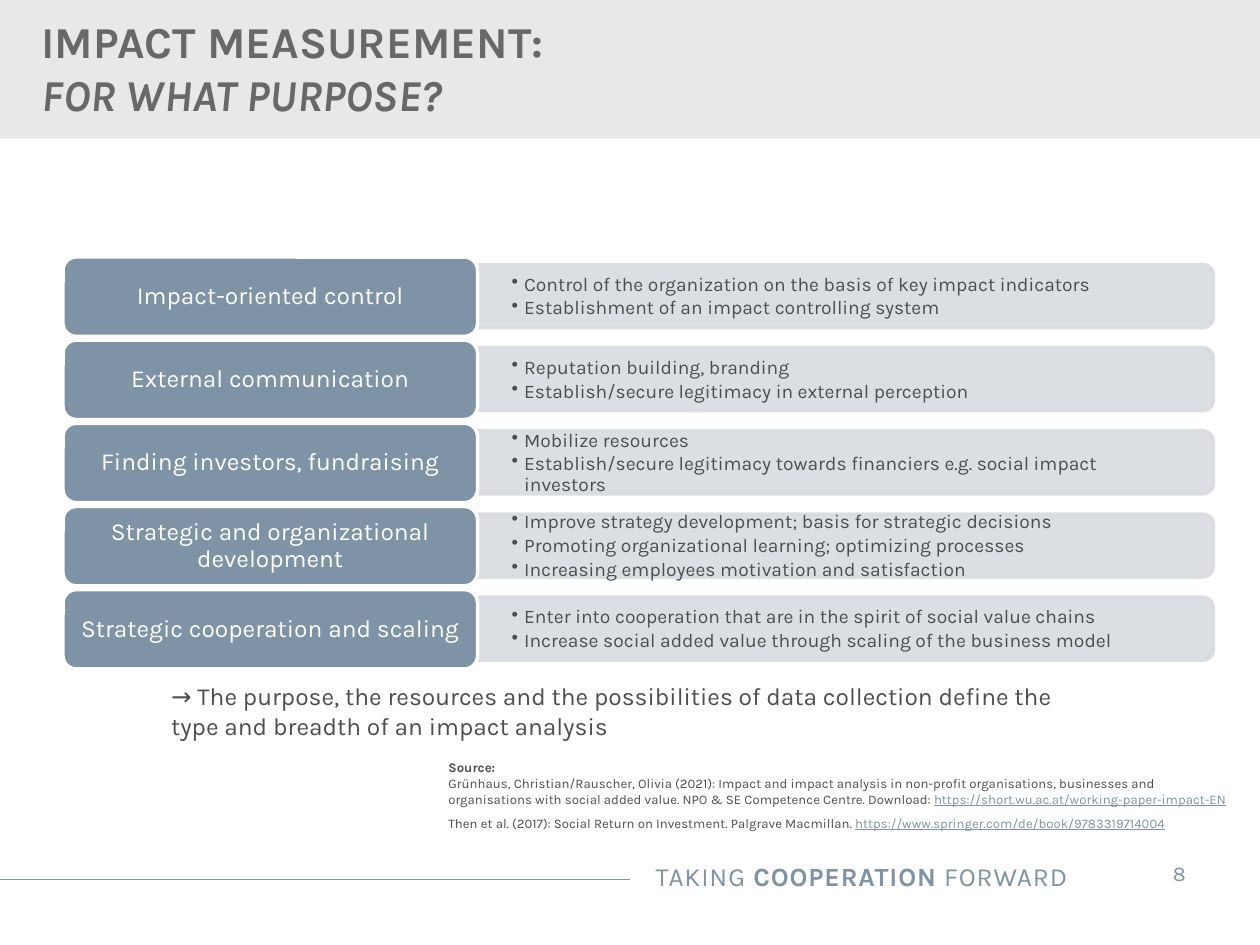
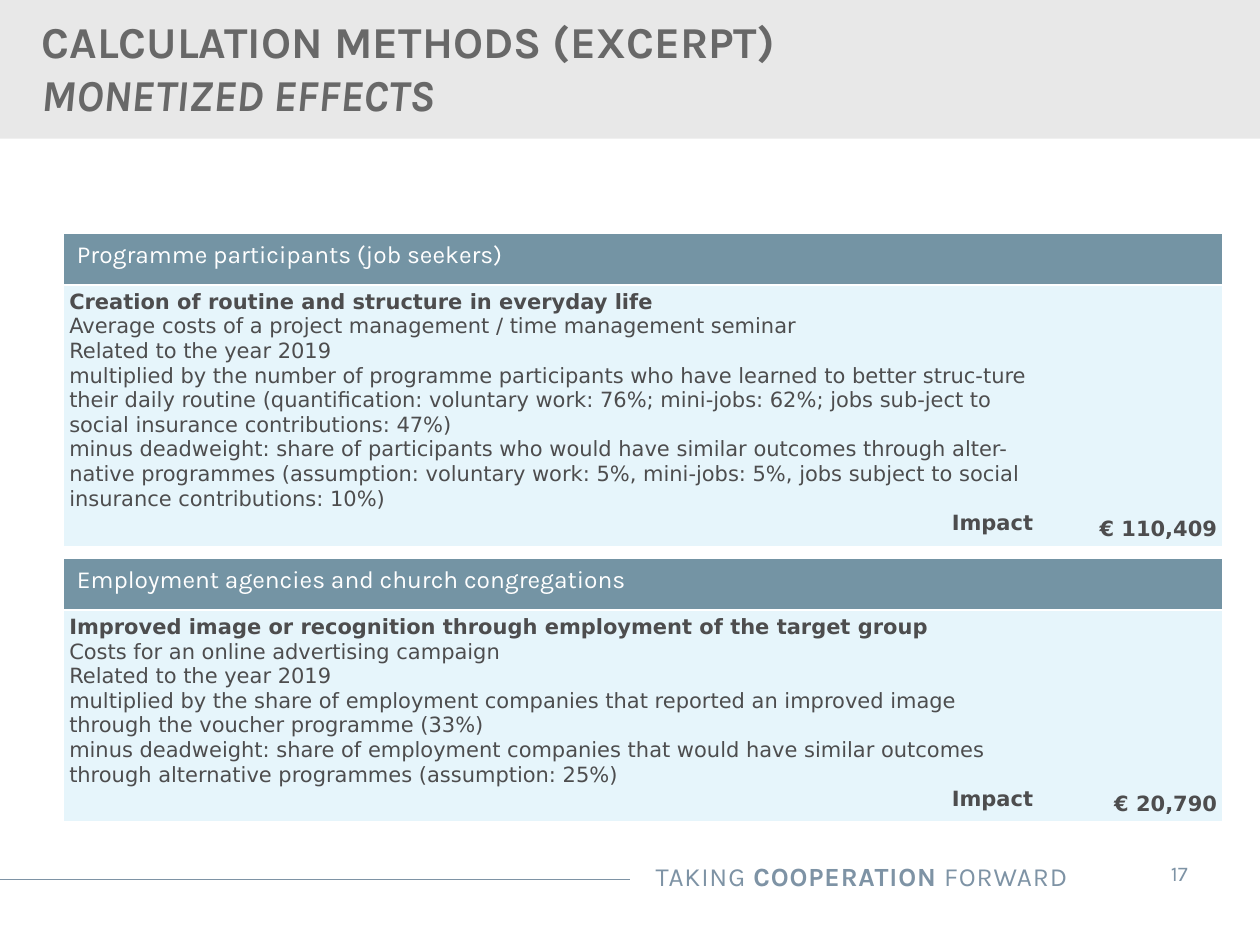
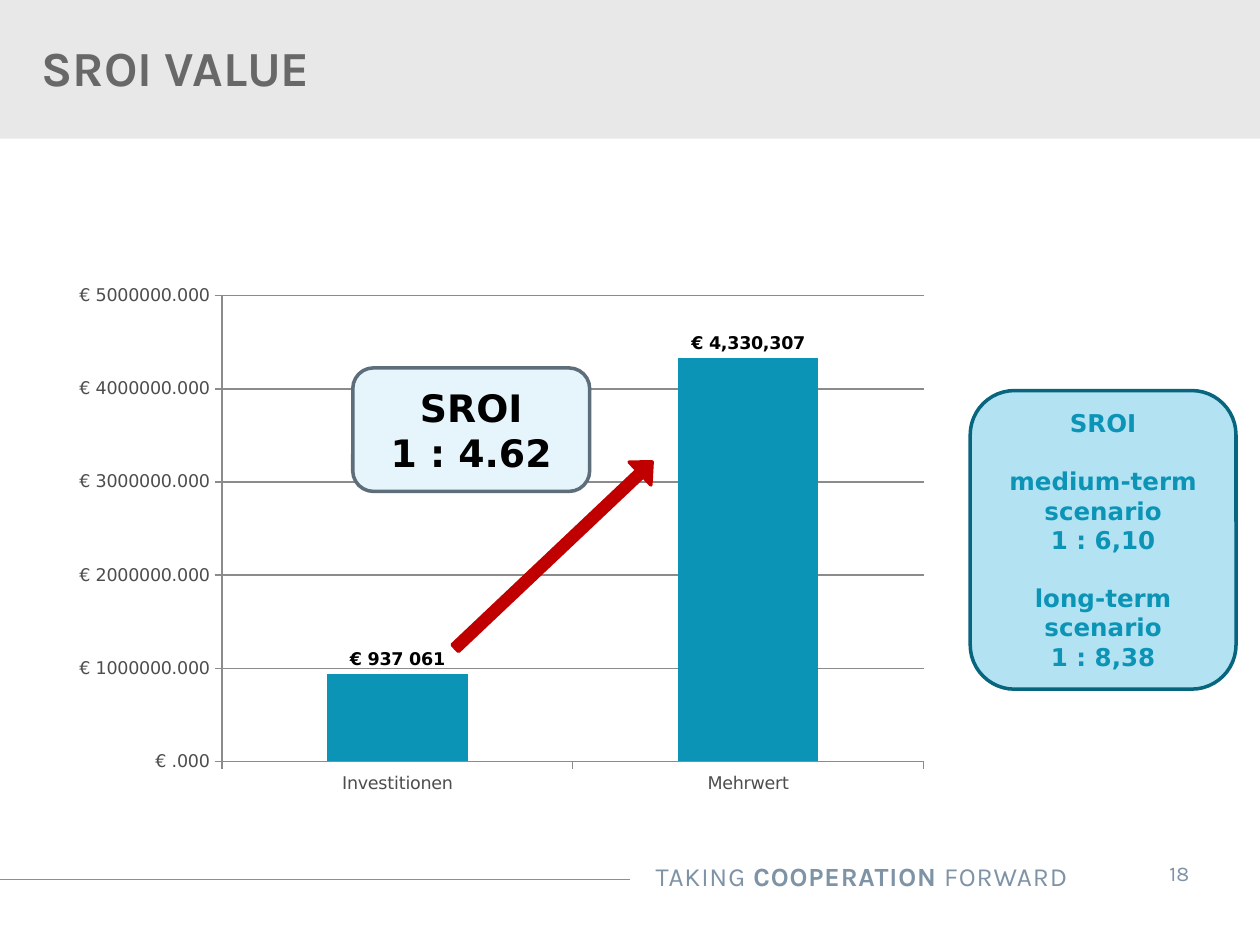
from pptx import Presentation
from pptx.chart.data import CategoryChartData
from pptx.dml.color import RGBColor
from pptx.enum.chart import XL_CHART_TYPE, XL_LABEL_POSITION, XL_TICK_MARK
from pptx.enum.shapes import MSO_CONNECTOR, MSO_SHAPE
from pptx.enum.text import MSO_ANCHOR, MSO_AUTO_SIZE, PP_ALIGN
from pptx.oxml import parse_xml
from pptx.oxml.ns import nsdecls, qn
from pptx.oxml.xmlchemy import OxmlElement
from pptx.util import Inches, Pt

BRAND_FONT, DATA_FONT = "Karla", "DejaVu Sans"
WHITE, BLACK, TEXT = "FFFFFF", "000000", "4D4D4E"
SLATE, BAND, TITLE = "7E93A5", "E8E8E8", "686868"
PALE, TEAL, HEADER, MIST = "E6F5FB", "0C94B7", "7494A4", "D8DCE1"
AXIS, RED = "8B8B8B", "C00000"
PLAIN_TABLE = "{2D5ABB26-0587-4C30-8999-92F81FD0307C}"


def color(value):
    return RGBColor.from_string(value)


def style_font(font, size, hex_color, name=BRAND_FONT, bold=False, italic=False):
    font.size, font.name = Pt(size), name
    font.bold, font.italic = bold, italic
    font.color.rgb = color(hex_color)


def write(frame, paragraphs, size, hex_color, name=BRAND_FONT, bold=False,
          align=PP_ALIGN.LEFT, anchor=MSO_ANCHOR.TOP):
    """Fill a text frame; a paragraph is a string or a list of strings, one per span."""
    frame.word_wrap = True
    frame.vertical_anchor = anchor
    for index, content in enumerate(paragraphs):
        para = frame.paragraphs[0] if index == 0 else frame.add_paragraph()
        para.alignment = align
        for text in [content] if isinstance(content, str) else content:
            span = para.add_run()
            span.text = text
            style_font(span.font, size, hex_color, name, bold)
    return frame.paragraphs


def set_margins(target, side, top):
    target.margin_left = target.margin_right = Inches(side)
    target.margin_top = target.margin_bottom = Inches(top)


def add_bullet(para, indent):
    properties = para._p.get_or_add_pPr()
    properties.set("marL", str(Inches(indent)))
    properties.set("indent", str(-Inches(indent)))
    bullet = OxmlElement("a:buChar")
    bullet.set("char", "•")
    properties.append(bullet)


def set_opacity(shape, percent):
    for node in list(shape.element.spPr.iter(qn("a:srgbClr"))):
        alpha = OxmlElement("a:alpha")
        alpha.set("val", str(percent * 1000))
        node.append(alpha)


def add_bottom_border(cell, hex_color, width):
    cell._tc.get_or_add_tcPr().insert(0, parse_xml(
        f'<a:lnB {nsdecls("a")} w="{Pt(width)}"><a:solidFill>'
        f'<a:srgbClr val="{hex_color}"/></a:solidFill></a:lnB>'))


class Deck:
    def __init__(self):
        self.presentation = Presentation()
        self.presentation.slide_width = Inches(10)
        self.presentation.slide_height = Inches(7.5)
        self.slide = None

    def add_slide(self, number, title_lines, title_size=25.2):
        """Start a slide with the band, title and footer that all slides share."""
        layout = self.presentation.slide_layouts[5]
        self.slide = self.presentation.slides.add_slide(layout)
        self.add_line(0, 6.98, 5, 6.98, SLATE, 0.75)
        self.add_shape(MSO_SHAPE.RECTANGLE, 0, 0, 10, 1.1, BAND)
        self.add_title(title_lines, title_size)
        slogan = self.add_text(3.88, 6.78, 4.69, 0.35,
                               [["TAKING ", "COOPERATION", " FORWARD"]], 15, SLATE,
                               align=PP_ALIGN.RIGHT, anchor=MSO_ANCHOR.MIDDLE)
        for span in slogan[0].runs:
            span.font._element.set("spc", "50")
        slogan[0].runs[1].font.bold = True
        self.add_text(8.99, 6.73, 0.74, 0.4, [str(number)], 12, SLATE,
                      align=PP_ALIGN.CENTER, anchor=MSO_ANCHOR.MIDDLE)

    def add_title(self, lines, size):
        title = self.slide.shapes.title
        title.element.getparent().append(title.element)  # in front of the band
        title.left, title.top = Inches(0), Inches(0.16)
        title.width, title.height = Inches(7.2), Inches(0.75)
        title.text_frame.auto_size = MSO_AUTO_SIZE.NONE
        title.text_frame.margin_left = Inches(0.33)
        paragraphs = write(title.text_frame, lines, size, TITLE, bold=True,
                           anchor=MSO_ANCHOR.MIDDLE)
        for para in paragraphs[1:]:
            para.runs[0].font.italic = True

    def add_shape(self, kind, left, top, width, height, fill, line=None):
        shape = self.slide.shapes.add_shape(
            kind, Inches(left), Inches(top), Inches(width), Inches(height))
        shape.shadow.inherit = False
        shape.fill.solid()
        shape.fill.fore_color.rgb = color(fill)
        if line:
            shape.line.color.rgb = color(line)
            shape.line.width = Pt(2)
        else:
            shape.line.fill.background()
        return shape

    def add_card(self, left, top, width, height, fill, line, lines, size,
                 hex_color, name=BRAND_FONT, bold=False):
        """Add a rounded rectangle with centred text."""
        card = self.add_shape(MSO_SHAPE.ROUNDED_RECTANGLE, left, top, width, height,
                              fill, line)
        return write(card.text_frame, lines, size, hex_color, name, bold,
                     PP_ALIGN.CENTER, MSO_ANCHOR.MIDDLE)

    def add_line(self, left, top, right, bottom, hex_color, width):
        line = self.slide.shapes.add_connector(
            MSO_CONNECTOR.STRAIGHT, Inches(left), Inches(top),
            Inches(right), Inches(bottom))
        line.line.color.rgb = color(hex_color)
        line.line.width = Pt(width)
        line.element.spPr.append(OxmlElement("a:effectLst"))

    def add_text(self, left, top, width, height, paragraphs, size, hex_color,
                 side=0.1, margin_top=0.05, **style):
        box = self.slide.shapes.add_textbox(
            Inches(left), Inches(top), Inches(width), Inches(height))
        set_margins(box.text_frame, side, margin_top)
        return write(box.text_frame, paragraphs, size, hex_color, **style)

    def add_purpose(self, top, label, details):
        """Add one row: a label card and a bar of bullets to its right."""
        bar_left, bar_width, bar_height = 3.79, 5.84, 0.5
        middle = top + 0.31
        bar = self.add_shape(MSO_SHAPE.ROUND_2_SAME_RECTANGLE,
                             bar_left + (bar_width - bar_height) / 2,
                             middle - bar_width / 2,
                             bar_height, bar_width, MIST, MIST)
        bar.rotation = 90
        set_opacity(bar, 90)
        bullets = self.add_text(bar_left, middle - 0.22, bar_width, 0.45, details, 11,
                                TEXT, side=0.27, margin_top=0,
                                anchor=MSO_ANCHOR.MIDDLE)
        for para in bullets:
            add_bullet(para, 0.1)
            para.line_spacing = 0.9
            para.space_after = Pt(1.65)
        label_paragraphs = self.add_card(0.5, top, 3.29, 0.63, SLATE, WHITE, [label],
                                         14, WHITE)
        label_paragraphs[0].line_spacing = 0.9

    def add_effect_table(self, top, body_height, group, lines, amount):
        """Add a table with a group header, its calculation and the impact amount."""
        header_height, widths = 0.4, (7.73, 1.46)
        frame = self.slide.shapes.add_table(
            2, 2, Inches(0.51), Inches(top), Inches(sum(widths)),
            Inches(header_height + body_height))
        frame.element.find(".//" + qn("a:tableStyleId")).text = PLAIN_TABLE
        table = frame.table
        for column, width in zip(table.columns, widths):
            column.width = Inches(width)
        for row, height in zip(table.rows, (header_height, body_height)):
            row.height = Inches(height)
        for index, fill in enumerate((HEADER, PALE)):
            for cell in table.rows[index].cells:
                add_bottom_border(cell, WHITE, 1)
                cell.fill.solid()
                cell.fill.fore_color.rgb = color(fill)
                if index == 1:
                    set_margins(cell, 0.04, 0.04)
        write(table.cell(0, 0).text_frame, [group], 14, WHITE)
        body = write(table.cell(1, 0).text_frame, lines + ["Impact"], 12, TEXT,
                     DATA_FONT)
        body[0].runs[0].font.bold = body[-1].runs[0].font.bold = True
        body[-1].alignment = PP_ALIGN.RIGHT
        write(table.cell(1, 1).text_frame, [amount], 12, TEXT, DATA_FONT, bold=True,
              align=PP_ALIGN.RIGHT)
        table.cell(1, 1).vertical_anchor = MSO_ANCHOR.BOTTOM

    def add_column_chart(self, left, top, width, height, categories, values):
        data = CategoryChartData()
        data.categories = categories
        data.add_series("Series 1", values)
        chart = self.slide.shapes.add_chart(
            XL_CHART_TYPE.COLUMN_CLUSTERED, Inches(left), Inches(top),
            Inches(width), Inches(height), data).chart
        chart.has_title = chart.has_legend = False
        style_font(chart.font, 10, TEXT, DATA_FONT)

        value_axis = chart.value_axis
        value_axis.minimum_scale, value_axis.maximum_scale = 0, 5000000
        value_axis.major_unit = 1000000
        value_axis.tick_labels.number_format = '"€"\\ #.##0'
        value_axis.tick_labels.number_format_is_linked = False
        value_axis.major_gridlines.format.line.color.rgb = color(AXIS)
        for axis in (chart.category_axis, value_axis):
            axis.major_tick_mark = XL_TICK_MARK.OUTSIDE
            axis.format.line.color.rgb = color(AXIS)

        plot = chart.plots[0]
        plot.gap_width = 150
        plot.vary_by_categories = False
        series = plot.series[0]
        series.format.fill.solid()
        series.format.fill.fore_color.rgb = color(TEAL)
        labels = series.data_labels
        labels.show_value = True
        labels.position = XL_LABEL_POSITION.OUTSIDE_END
        labels.number_format = '[<1000000]"€"\\ #\\ ##0;"€"\\ #,##0'
        labels.number_format_is_linked = False
        style_font(labels.font, 10, BLACK, DATA_FONT, bold=True)

        self.place_plot(chart, x=0.18, y=0.04, w=0.8, h=0.88)

    @staticmethod
    def place_plot(chart, **fractions):
        """Fix the inner plot area as fractions of the chart frame."""
        area = chart._chartSpace.find(".//" + qn("c:plotArea"))
        for layout in area.findall(qn("c:layout")):
            area.remove(layout)
        sizes = "".join(f'<c:{key} val="{value}"/>' for key, value in fractions.items())
        area.insert(0, parse_xml(
            f'<c:layout {nsdecls("c")}><c:manualLayout><c:layoutTarget val="inner"/>'
            f'<c:xMode val="edge"/><c:yMode val="edge"/>{sizes}'
            '</c:manualLayout></c:layout>'))


def add_purpose_slide(deck):
    deck.add_slide(8, ["IMPACT MEASUREMENT:", "FOR WHAT PURPOSE?"])
    purposes = [
        ("Impact-oriented control",
         ["Control of the organization on the basis of key impact indicators",
          "Establishment of an impact controlling system"]),
        ("External communication",
         ["Reputation building, branding",
          "Establish/secure legitimacy in external perception"]),
        ("Finding investors, fundraising",
         ["Mobilize resources",
          "Establish/secure legitimacy towards financiers e.g. social impact investors"]),
        ("Strategic and organizational development",
         ["Improve strategy development; basis for strategic decisions",
          "Promoting organizational learning; optimizing processes",
          "Increasing employees motivation and satisfaction"]),
        ("Strategic cooperation and scaling",
         ["Enter into cooperation that are in the spirit of social value chains",
          "Increase social added value through scaling of the business model"]),
    ]
    for index, (label, details) in enumerate(purposes):
        deck.add_purpose(2.04 + index * 0.66, label, details)
    deck.add_text(1.26, 5.36, 7.4, 0.57,
                  ["→ The purpose, the resources and the possibilities of data collection "
                   "define the type and breadth of an impact analysis"], 14, TEXT)
    sources = deck.add_text(3.46, 5.98, 6.42, 0.68, [
        "Source:",
        ["Grünhaus, Christian/Rauscher, Olivia (2021): Impact and impact analysis in "
         "non-profit organisations, businesses and organisations with social added "
         "value. NPO & SE Competence Centre. Download: ",
         "https://short.wu.ac.at/working-paper-impact-EN"],
        ["Then et al. (2017): Social Return on Investment. Palgrave Macmillan. ",
         "https://www.springer.com/de/book/9783319714004"],
    ], 7.5, TEXT)
    sources[0].runs[0].font.bold = True
    sources[2].space_before = Pt(4.5)
    for para in sources[1:]:
        address = para.runs[1].font
        address.underline = True
        address.color.rgb = color(SLATE)


def add_methods_slide(deck):
    deck.add_slide(17, ["CALCULATION METHODS (EXCERPT)", "MONETIZED EFFECTS"])
    deck.add_effect_table(1.86, 2.03, "Programme participants (job seekers)", [
        "Creation of routine and structure in everyday life",
        "Average costs of a project management / time management seminar",
        "Related to the year 2019",
        "multiplied by the number of programme participants who have learned to better "
        "struc-ture their daily routine (quantification: voluntary work: 76%; "
        "mini-jobs: 62%; jobs sub-ject to social insurance contributions: 47%)",
        "minus deadweight: share of participants who would have similar outcomes through "
        "alter-native programmes (assumption: voluntary work: 5%, mini-jobs: 5%, jobs "
        "subject to social insurance contributions: 10%)",
    ], "€ 110,409")
    deck.add_effect_table(4.44, 1.64, "Employment agencies and church congregations", [
        "Improved image or recognition through employment of the target group",
        "Costs for an online advertising campaign",
        "Related to the year 2019",
        "multiplied by the share of employment companies that reported an improved image "
        "through the voucher programme (33%)",
        "minus deadweight: share of employment companies that would have similar outcomes "
        "through alternative programmes (assumption: 25%)",
    ], "€ 20,790")


def add_value_slide(deck):
    deck.add_slide(18, ["SROI VALUE"], 28)
    deck.add_column_chart(0.51, 2.18, 6.96, 4.2, ["Investitionen", "Mehrwert"],
                          [937061, 4330307])
    arrow = deck.add_shape(MSO_SHAPE.RIGHT_ARROW, 3.32, 4.28, 2.15, 0.25, RED, RED)
    arrow.rotation = 316.6
    arrow.adjustments[0], arrow.adjustments[1] = 0.29, 0.53
    deck.add_card(2.8, 2.92, 1.88, 0.98, PALE, "5D6D7A", ["SROI", "1 : 4.62"],
                  21.6, BLACK, DATA_FONT, bold=True)
    scenarios = deck.add_card(
        7.7, 3.1, 2.11, 2.37, "B3E2F2", "08657E",
        ["SROI", "medium-term scenario", "1 : 6,10", "long-term scenario", "1 : 8,38"],
        14, TEAL, DATA_FONT, bold=True)
    for para in scenarios[1::2]:
        para.space_before = Pt(16.3)


def main():
    deck = Deck()
    add_purpose_slide(deck)
    add_methods_slide(deck)
    add_value_slide(deck)
    deck.presentation.save("out.pptx")


if __name__ == "__main__":
    main()
